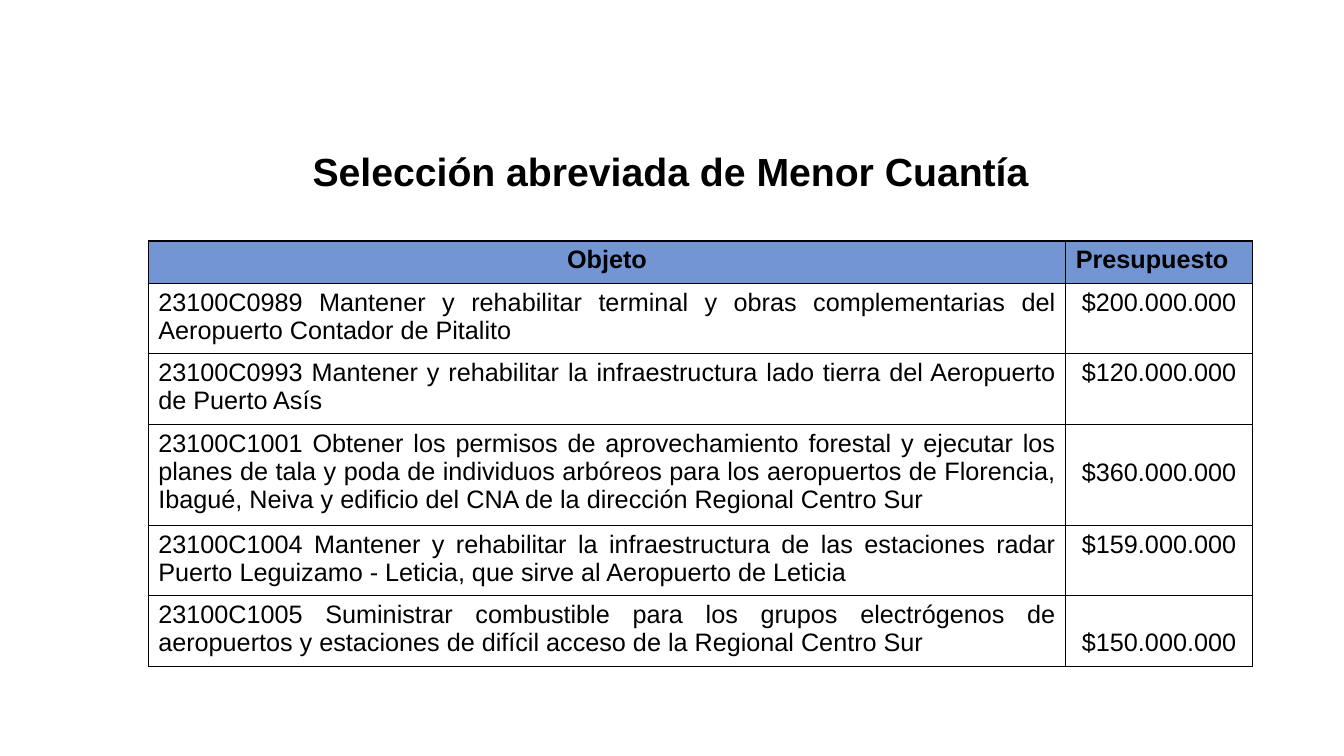
from lxml.etree import SubElement
from pptx import Presentation
from pptx.dml.color import RGBColor
from pptx.enum.text import MSO_ANCHOR as Anchor, PP_ALIGN as Align
from pptx.oxml.ns import qn
from pptx.util import Inches, Pt

CONTRACTS = [
    ("23100C0989 Mantener y rehabilitar terminal y obras complementarias del "
     "Aeropuerto Contador de Pitalito", "$200.000.000", 0.7, Anchor.TOP),
    ("23100C0993 Mantener y rehabilitar la infraestructura lado tierra del "
     "Aeropuerto de Puerto Asís", "$120.000.000", 0.7, Anchor.TOP),
    ("23100C1001 Obtener los permisos de aprovechamiento forestal y ejecutar los "
     "planes de tala y poda de individuos arbóreos para los aeropuertos de Florencia, "
     "Ibagué, Neiva y edificio del CNA de la dirección Regional Centro Sur",
     "$360.000.000", 1.0, Anchor.MIDDLE),
    ("23100C1004 Mantener y rehabilitar la infraestructura de las estaciones radar "
     "Puerto Leguizamo - Leticia, que sirve al Aeropuerto de Leticia",
     "$159.000.000", 0.7, Anchor.TOP),
    ("23100C1005 Suministrar combustible para los grupos electrógenos de "
     "aeropuertos y estaciones de difícil acceso de la Regional Centro Sur",
     "$150.000.000", 0.7, Anchor.BOTTOM),
]


def color(hex_code):
    """Return the colour for a hex string."""
    return RGBColor.from_string(hex_code)


def write(frame, text, size, align, bold=False):
    """Write one black Arial run into a text frame."""
    paragraph = frame.paragraphs[0]
    paragraph.alignment = align
    run = paragraph.add_run()
    run.text = text
    run.font.name = "Arial"
    run.font.size = Pt(size)
    run.font.bold = bold
    run.font.color.rgb = color("000000")


def add_borders(cell):
    """Draw a thin black line on each side of a cell."""
    properties = cell._tc.get_or_add_tcPr()
    for position, side in enumerate(("a:lnL", "a:lnR", "a:lnT", "a:lnB")):
        border = properties.makeelement(qn(side), {"w": str(Pt(1))})
        fill = SubElement(border, qn("a:solidFill"))
        SubElement(fill, qn("a:srgbClr"), val="000000")
        properties.insert(position, border)


def fill_cell(cell, text, align, anchor=Anchor.TOP, header=False):
    """Write and style one table cell."""
    cell.margin_bottom = Inches(0.09)
    cell.vertical_anchor = anchor
    if header:
        cell.fill.solid()
        cell.fill.fore_color.rgb = color("7395D3")
    else:
        cell.fill.background()
    add_borders(cell)
    write(cell.text_frame, text, 18, align, header)


def add_title(slide, left, top, width, height):
    """Place the slide title in its box."""
    title = slide.shapes.title
    title.left, title.top = Inches(left), Inches(top)
    title.width, title.height = Inches(width), Inches(height)
    title.text_frame.word_wrap = True
    title.text_frame.vertical_anchor = Anchor.TOP
    write(title.text_frame, "Selección abreviada de Menor Cuantía", 28, Align.CENTER, True)


def add_contracts(slide, left, top, width, budget_width):
    """Place the table of contracts and budgets."""
    heights = [0.41] + [height for _, _, height, _ in CONTRACTS]
    table = slide.shapes.add_table(
        len(heights), 2, Inches(left), Inches(top), Inches(width), Inches(sum(heights))
    ).table
    table.horz_banding = False
    table.columns[0].width = Inches(width - budget_width)
    table.columns[1].width = Inches(budget_width)
    for row, height in zip(table.rows, heights):
        row.height = Inches(height)
    fill_cell(table.cell(0, 0), "Objeto", Align.CENTER, header=True)
    fill_cell(table.cell(0, 1), "Presupuesto", Align.LEFT, header=True)
    for row, (purpose, budget, _, anchor) in enumerate(CONTRACTS, start=1):
        fill_cell(table.cell(row, 0), purpose, Align.JUSTIFY)
        fill_cell(table.cell(row, 1), budget, Align.CENTER, anchor)


def main():
    """Build and save the presentation."""
    deck = Presentation()
    deck.slide_width, deck.slide_height = Inches(13.33), Inches(7.5)
    slide = deck.slides.add_slide(deck.slide_layouts[5])
    add_title(slide, 1.47, 1.41, 10.36, 0.57)
    add_contracts(slide, 1.47, 2.39, 10.95, 1.85)
    deck.save("out.pptx")


if __name__ == "__main__":
    main()
